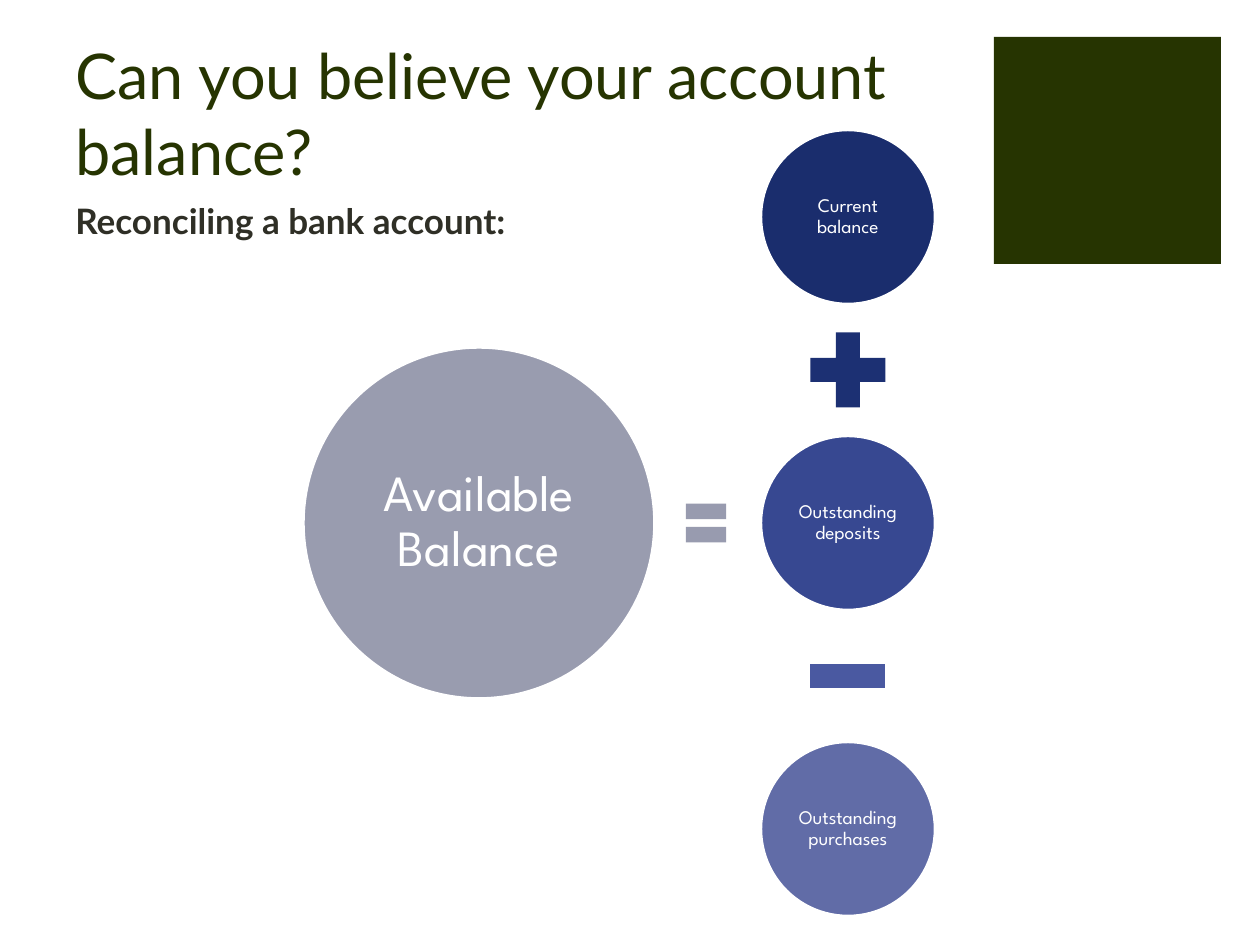
import pptx
import pptx.util
import pptx.dml.color
import pptx.enum.shapes
import pptx.enum.text

PX = 914400 / 126
SHAPE = pptx.enum.shapes.MSO_SHAPE
ANCHOR = pptx.enum.text.MSO_ANCHOR
ALIGN = pptx.enum.text.PP_ALIGN

COLORS = {
    "olive": "263401", "ink": "2F2F26", "white": "FFFFFF",
    "navy": "1A2D6D", "plus": "1C3073", "blue": "374891",
    "minus": "4A59A1", "violet": "616CA7", "equal": "989BAF", "gray": "999CAF",
}

HEADINGS = [
    ("Can you believe your account balance?", (63, 37, 897, 157), ANCHOR.BOTTOM,
     {"size": 36, "name": "Lato", "bold": False}, "olive"),
    ("Reconciling a bank account:", (63, 193, 897, 93), ANCHOR.TOP,
     {"size": 20, "name": "Lato", "bold": True}, "ink"),
]
CORNER_SQUARE = (994, 37, 227, 227)

TERMS = [("Current balance", "navy"), ("Outstanding deposits", "blue"),
         ("Outstanding purchases", "violet")]
OPERATORS = [(SHAPE.MATH_PLUS, "plus"), (SHAPE.MATH_MINUS, "minus")]
RESULT = ("Available Balance", "gray")

TERM_X, FIRST_TERM_Y, TERM_STEP = 848, 217, 306
TERM_SIZE, OPERATOR_SIZE = 175, 102
RESULT_X, RESULT_SIZE = 479, 352
EQUAL_X, EQUAL_WIDTH, EQUAL_HEIGHT = 706, 55, 66
MIDDLE_Y = FIRST_TERM_Y + TERM_STEP


def px(value):
    return round(value * PX)


def rgb(color):
    return pptx.dml.color.RGBColor.from_string(COLORS[color])


def centered(x, y, width, height):
    return x - width / 2, y - height / 2, width, height


def write(shape, text, anchor, inset, font, color, paragraph_format):
    frame = shape.text_frame
    frame_format = {"word_wrap": True, "vertical_anchor": anchor, **inset}
    paragraph = frame.paragraphs[0]
    paragraph.text = text
    font_format = {**font, "size": pptx.util.Pt(font["size"])}
    for target, values in ((frame, frame_format), (paragraph, paragraph_format),
                           (paragraph.font, font_format)):
        for key, value in values.items():
            setattr(target, key, value)
    paragraph.font.color.rgb = rgb(color)


def draw(slide, kind, box, color):
    shape = slide.shapes.add_shape(kind, *map(px, box))
    shape.shadow.inherit = False
    shape.fill.solid()
    shape.fill.fore_color.rgb = rgb(color)
    shape.line.fill.background()
    return shape


def draw_circle(slide, term, x, y, size, font_size, inset):
    text, color = term
    circle = draw(slide, SHAPE.OVAL, centered(x, y, size, size), color)
    circle.line.color.rgb = rgb("white")
    circle.line.width = pptx.util.Pt(2)
    margins = {f"margin_{side}": px(inset) for side in ("left", "top", "right", "bottom")}
    write(circle, text, ANCHOR.MIDDLE, margins,
          {"size": font_size, "name": "League Spartan"}, "white",
          {"alignment": ALIGN.CENTER, "line_spacing": 0.9})


def main():
    deck = pptx.Presentation()
    deck.slide_width, deck.slide_height = px(1260), px(945)
    slide = deck.slides.add_slide(deck.slide_layouts[6])

    draw(slide, SHAPE.RECTANGLE, CORNER_SQUARE, "olive")
    for text, box, anchor, font, color in HEADINGS:
        heading = slide.shapes.add_textbox(*map(px, box))
        write(heading, text, anchor, {}, font, color, {"alignment": ALIGN.LEFT})

    for index, term in enumerate(TERMS):
        y = FIRST_TERM_Y + index * TERM_STEP
        draw_circle(slide, term, TERM_X, y, TERM_SIZE, 11, 3)
    for index, (kind, color) in enumerate(OPERATORS):
        y = FIRST_TERM_Y + (index + 0.5) * TERM_STEP
        draw(slide, kind, centered(TERM_X, y, OPERATOR_SIZE, OPERATOR_SIZE), color)

    draw(slide, SHAPE.MATH_EQUAL,
         centered(EQUAL_X, MIDDLE_Y, EQUAL_WIDTH, EQUAL_HEIGHT), "equal")
    draw_circle(slide, RESULT, RESULT_X, MIDDLE_Y, RESULT_SIZE, 29, 5)
    deck.save("out.pptx")


if __name__ == "__main__":
    main()
